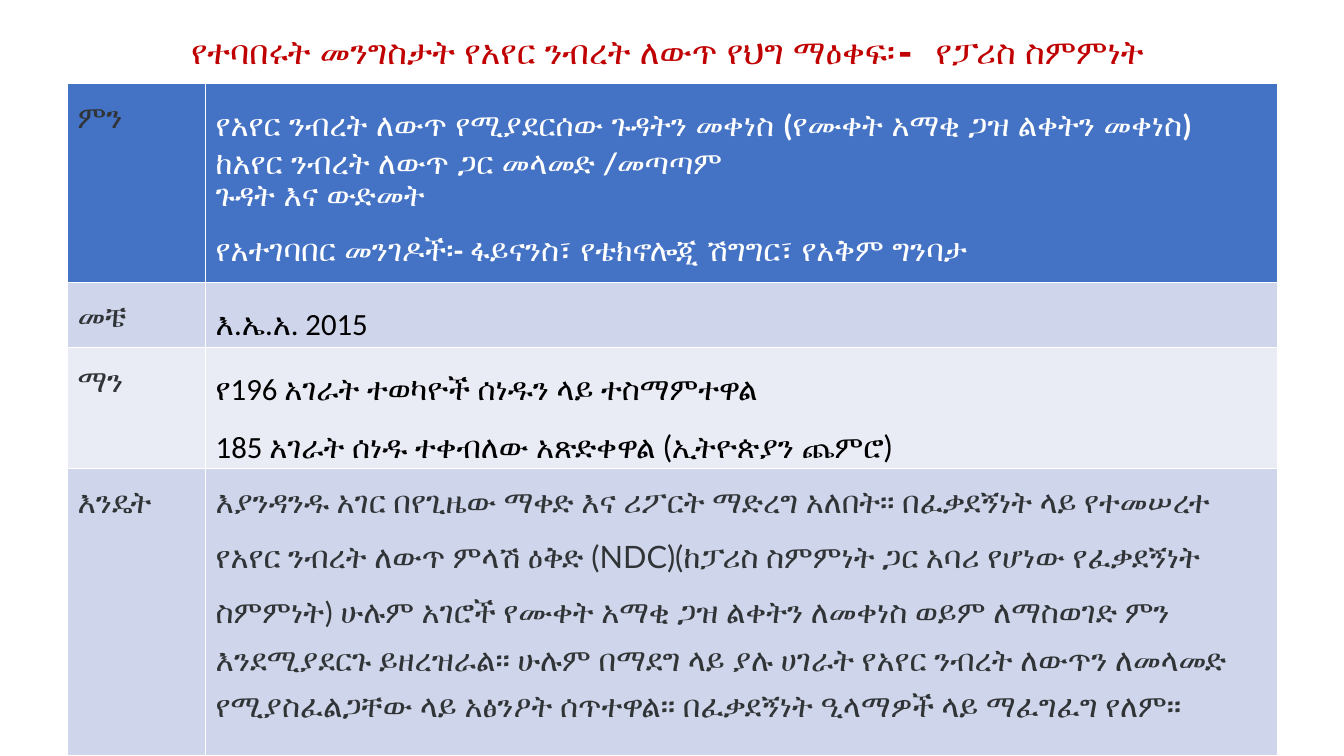
import pptx
import pptx.util
import pptx.dml.color
import pptx.enum.text

Inches = pptx.util.Inches
RGBColor = pptx.dml.color.RGBColor

RED = RGBColor(0xC0, 0x00, 0x00)
BLUE = RGBColor(0x44, 0x72, 0xC4)
DARK_BAND = RGBColor(0xCF, 0xD5, 0xEA)
LIGHT_BAND = RGBColor(0xE9, 0xEB, 0xF5)
WHITE = RGBColor(0xFF, 0xFF, 0xFF)
BLACK = RGBColor(0x00, 0x00, 0x00)
SLATE = RGBColor(0x30, 0x34, 0x36)

TITLE = "የተባበሩት መንግስታት የአየር ንብረት ለውጥ የህግ ማዕቀፍ፡- የፓሪስ ስምምነት "
COLUMN_WIDTHS = (1.37, 10.63)

# Each row: height, fill, answer colour, label, answer paragraphs.
# Each paragraph: line spacing, then (text, font) spans.
ROWS = [
    (1.97, BLUE, WHITE, "ምን", [
        (1.5, [("የአየር ንብረት ለውጥ የሚያደርሰው ጉዳትን መቀነስ (የሙቀት አማቂ ጋዝ ልቀትን መቀነስ)", "Calibri")]),
        (1.0, [("ከአየር ንብረት ለውጥ ጋር መላመድ /መጣጣም", "Calibri")]),
        (1.0, [("ጉዳት እና ውድመት", "Calibri")]),
        (1.5, [("የአተገባበር መንገዶች፡- ፋይናንስ፣ የቴክኖሎጂ ሽግግር፣ የአቅም ግንባታ", "Calibri")]),
    ]),
    (0.57, DARK_BAND, BLACK, "መቼ", [
        (1.5, [("እ.ኤ.አ. 2015", "Calibri")]),
    ]),
    (1.09, LIGHT_BAND, BLACK, "ማን", [
        (1.5, [("የ", "Lato"), ("196 ", "Calibri"),
               ("አገራት ተወካዮች ሰነዱን ላይ ተስማምተዋል", "Lato")]),
        (1.5, [("185 ", "Calibri"),
               ("አገራት ሰነዱ ተቀብለው አጽድቀዋል (ኢትዮጵያን ጨምሮ)", "Lato")]),
    ]),
    (2.14, DARK_BAND, SLATE, "እንዴት", [
        (1.5, [("እያንዳንዱ አገር በየጊዜው ማቀድ እና ሪፖርት ማድረግ አለበት። በፈቃደኝነት ላይ የተመሠረተ "
                "የአየር ንብረት ለውጥ ምላሽ ዕቅድ (NDC)(ከፓሪስ ስምምነት ጋር አባሪ የሆነው "
                "የፈቃደኝነት ስምምነት", "Lato"),
               (") ", "Calibri"),
               ("ሁሉም አገሮች የሙቀት አማቂ ጋዝ ልቀትን ለመቀነስ ወይም ለማስወገድ ምን "
                "እንደሚያደርጉ ይዘረዝራል። ሁሉም በማደግ ላይ ያሉ ሀገራት የአየር ንብረት ለውጥን "
                "ለመላመድ ", "Lato"),
               ("የሚያስፈልጋቸው ላይ ", "Calibri"),
               ("አፅንዖት ሰጥተዋል። በፈቃደኝነት ዒላማዎች ላይ ማፈግፈግ የለም።", "Lato")]),
    ]),
]


class AgreementSlide:
    title_size = pptx.util.Pt(24)
    body_size = pptx.util.Pt(22)

    def __init__(self, page):
        self.page = page

    def add_span(self, para, text, font, size, color, bold):
        span = para.add_run()
        span.text = text
        span.font.name = font
        span.font.size = size
        span.font.color.rgb = color
        span.font.bold = bold

    def add_title(self, text, left, top, width, height):
        box = self.page.shapes.add_textbox(
            Inches(left), Inches(top), Inches(width), Inches(height))
        frame = box.text_frame
        frame.word_wrap = True
        frame.auto_size = pptx.enum.text.MSO_AUTO_SIZE.SHAPE_TO_FIT_TEXT
        para = frame.paragraphs[0]
        para.alignment = pptx.enum.text.PP_ALIGN.CENTER
        self.add_span(para, text, "DejaVu Sans Mono", self.title_size, RED, True)

    def fill_cell(self, cell, fill, color, paragraphs, bold):
        cell.fill.solid()
        cell.fill.fore_color.rgb = fill
        frame = cell.text_frame
        for index, (spacing, spans) in enumerate(paragraphs):
            para = frame.add_paragraph() if index else frame.paragraphs[0]
            para.line_spacing = spacing
            for text, font in spans:
                self.add_span(para, text, font, self.body_size, color, bold)

    def add_table(self, rows, left, top, width, height):
        table = self.page.shapes.add_table(
            len(rows), len(COLUMN_WIDTHS),
            Inches(left), Inches(top), Inches(width), Inches(height)).table
        for column, column_width in zip(table.columns, COLUMN_WIDTHS):
            column.width = Inches(column_width)
        for index, (row_height, fill, color, label, answer) in enumerate(rows):
            table.rows[index].height = Inches(row_height)
            self.fill_cell(table.cell(index, 0), fill, SLATE,
                           [(1.5, [(label, "Lato")])], False)
            self.fill_cell(table.cell(index, 1), fill, color, answer, index == 0)


def main():
    deck = pptx.Presentation()
    deck.slide_width = Inches(13.33)
    deck.slide_height = Inches(7.5)
    slide = AgreementSlide(deck.slides.add_slide(deck.slide_layouts[6]))
    slide.add_title(TITLE, 0.89, 0.26, 11.55, 0.5)
    slide.add_table(ROWS, 0.67, 0.83, 12, 6.5)
    deck.save("out.pptx")


if __name__ == "__main__":
    main()
